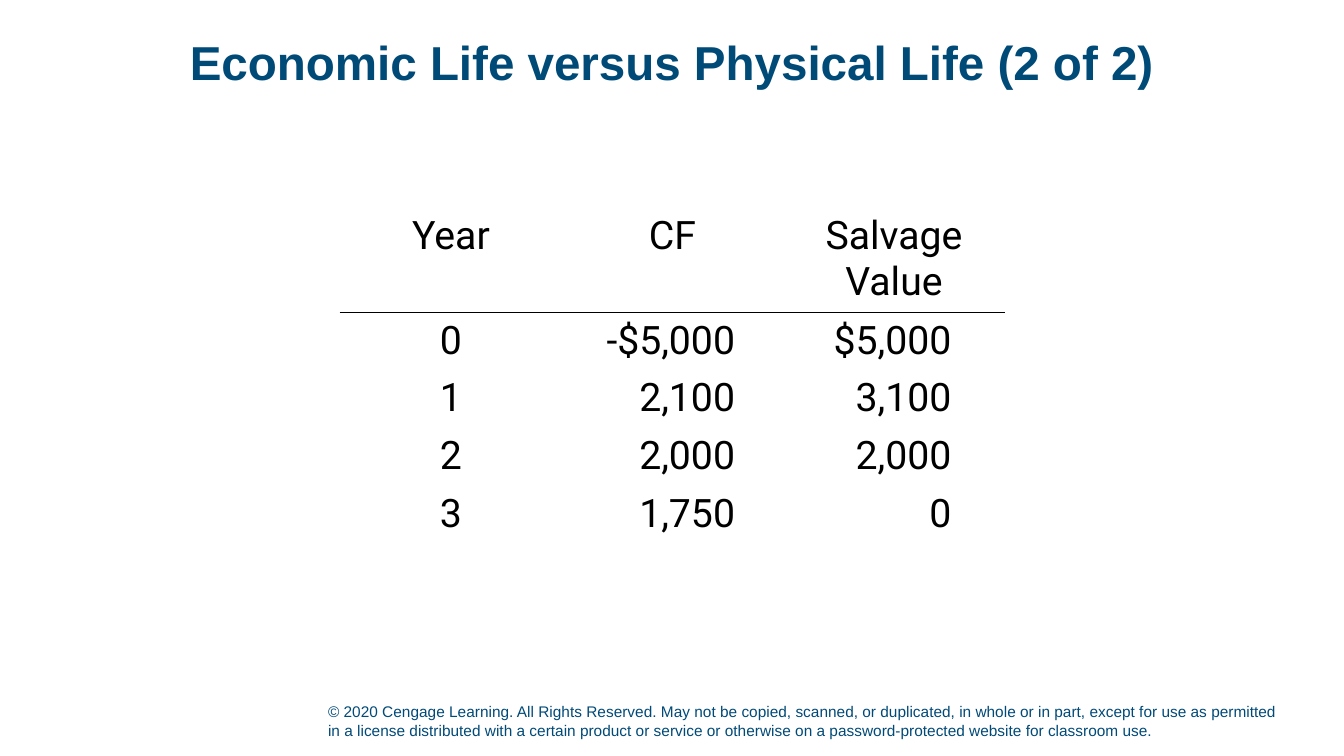
from dataclasses import dataclass

from lxml.etree import SubElement
from pptx import Presentation
from pptx.dml.color import RGBColor
from pptx.enum.text import MSO_ANCHOR as ANCHOR, PP_ALIGN as ALIGN
from pptx.oxml import parse_xml
from pptx.oxml.ns import nsdecls, qn
from pptx.slide import Slide
from pptx.table import _Cell as Cell
from pptx.text.text import _Paragraph as Paragraph
from pptx.util import Emu, Pt

NAVY = RGBColor(0x00, 0x4A, 0x78)
BLACK = RGBColor(0x00, 0x00, 0x00)
EMU_PER_PX = 9525

HEADER_H, ROW_H, COL_W = 99, 55, 211
PAD_X, PAD_Y = 10, 5


@dataclass(frozen=True)
class Column:
    heading: str
    values: tuple[str, ...]
    align: ALIGN
    right_inset: int


COLUMNS = (
    Column("Year", ("0", "1", "2", "3"), ALIGN.CENTER, PAD_X),
    Column("CF", ("-$5,000", "2,100", "2,000", "1,750"), ALIGN.RIGHT, 46),
    Column("Salvage Value", ("$5,000", "3,100", "2,000", "0"), ALIGN.RIGHT, 51),
)
COPYRIGHT = (
    "© 2020 Cengage Learning. All Rights Reserved. May not be copied, scanned, "
    "or duplicated, in whole or in part, except for use as permitted in a license "
    "distributed with a certain product or service or otherwise on a "
    "password-protected website for classroom use."
)


def px(n: int) -> Emu:
    return Emu(n * EMU_PER_PX)


def style(p: Paragraph, name: str, size: int, color: RGBColor, align: ALIGN) -> None:
    p.alignment = align
    p.font.name = name
    p.font.size = Pt(size)
    p.font.color.rgb = color


def add_border(cell: Cell, side: str) -> None:
    ln = parse_xml(f'<a:{side} {nsdecls("a")} w="{Pt(1)}"/>')
    fill = SubElement(ln, qn("a:solidFill"))
    SubElement(fill, qn("a:srgbClr"), val=str(BLACK))
    cell._tc.get_or_add_tcPr().insert(0, ln)


def fill_cell(cell: Cell, text: str, align: ALIGN, right_inset: int) -> None:
    cell.margin_left, cell.margin_right = px(PAD_X), px(right_inset)
    cell.margin_top = cell.margin_bottom = px(PAD_Y)
    cell.vertical_anchor = ANCHOR.TOP
    cell.fill.background()
    cell.text = text
    style(cell.text_frame.paragraphs[0], "Roboto", 28, BLACK, align)


def add_title(slide: Slide, text: str) -> None:
    sp = slide.shapes.title
    sp.left, sp.top, sp.width, sp.height = px(88), px(14), px(1104), px(96)
    tf = sp.text_frame
    tf.text = text
    tf.vertical_anchor = ANCHOR.MIDDLE
    p = tf.paragraphs[0]
    style(p, "Arial", 34, NAVY, ALIGN.CENTER)
    p.font.bold = True
    p.line_spacing = 0.9


def add_cash_flows(slide: Slide) -> None:
    n_rows = len(COLUMNS[0].values) + 1
    table = slide.shapes.add_table(
        n_rows, len(COLUMNS), px(324), px(198),
        px(COL_W * len(COLUMNS)), px(HEADER_H + ROW_H * (n_rows - 1)),
    ).table
    table.first_row = table.horz_banding = False
    for i, row in enumerate(table.rows):
        row.height = px(ROW_H if i else HEADER_H)
    for j, col in enumerate(COLUMNS):
        table.columns[j].width = px(COL_W)
        fill_cell(table.cell(0, j), col.heading, ALIGN.CENTER, PAD_X)
        for i, value in enumerate(col.values, start=1):
            fill_cell(table.cell(i, j), value, col.align, col.right_inset)
        add_border(table.cell(0, j), "lnB")
        add_border(table.cell(1, j), "lnT")


def add_copyright(slide: Slide) -> None:
    tf = slide.shapes.add_textbox(px(303), px(661), px(925), px(48)).text_frame
    tf.word_wrap = True
    tf.vertical_anchor = ANCHOR.BOTTOM
    tf.text = COPYRIGHT
    style(tf.paragraphs[0], "Arial", 11, NAVY, ALIGN.LEFT)


def main() -> None:
    prs = Presentation()
    prs.slide_width, prs.slide_height = px(1280), px(720)
    slide = prs.slides.add_slide(prs.slide_layouts[5])
    add_copyright(slide)
    add_title(slide, "Economic Life versus Physical Life (2 of 2)")
    add_cash_flows(slide)
    prs.save("out.pptx")


if __name__ == "__main__":
    main()
